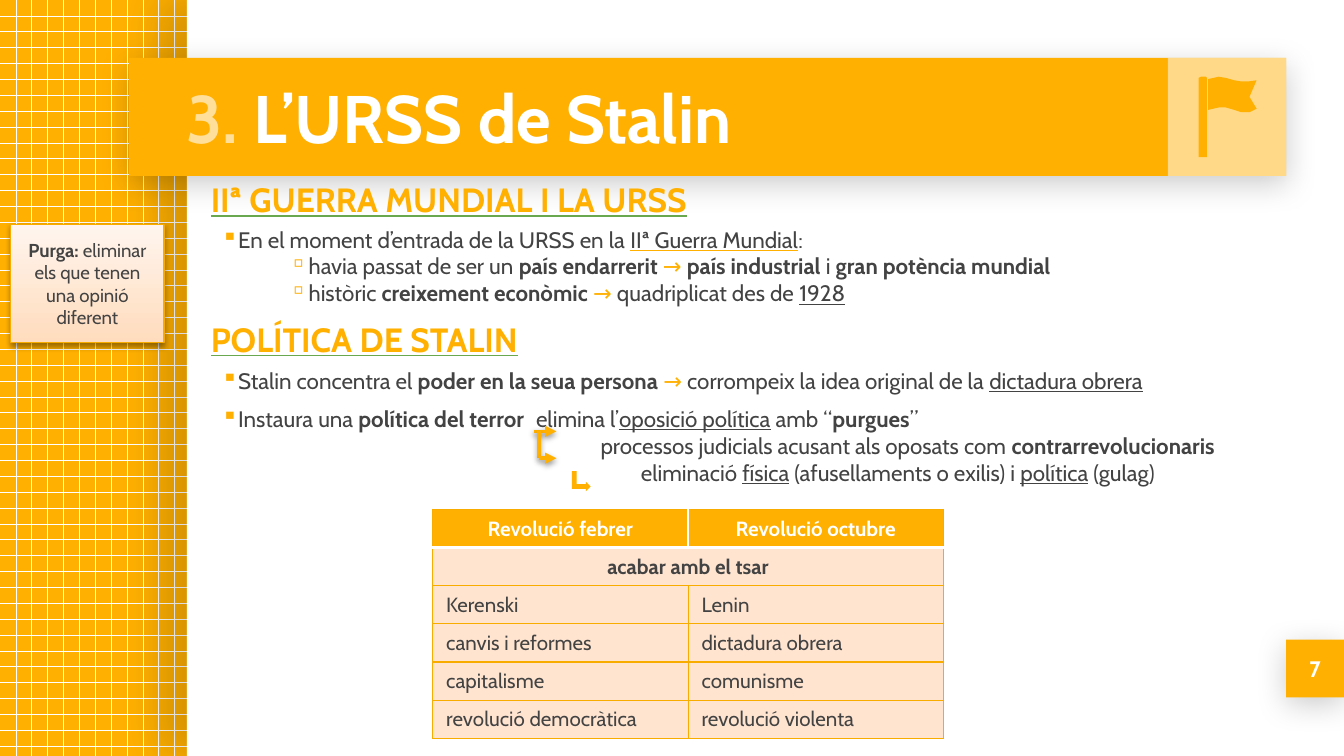
from lxml import etree
from pptx import Presentation, util as u
from pptx.dml.color import RGBColor
from pptx.enum import dml, shapes, text
from pptx.oxml import ns

ORANGE = RGBColor(0xFF, 0xB0, 0x00)
AMBER = RGBColor(0xF9, 0xAC, 0x00)
PALE_ORANGE = RGBColor(0xFF, 0xDF, 0x99)
PEACH = RGBColor(0xFF, 0xE4, 0xD0)
PEACH_DARK = RGBColor(0xFF, 0xDC, 0xBD)
PEACH_LIGHT = RGBColor(0xFF, 0xF5, 0xEE)
GREEN = RGBColor(0x6A, 0xA8, 0x4F)
GREY = RGBColor(0x43, 0x43, 0x43)
WHITE = RGBColor(0xFF, 0xFF, 0xFF)
BLACK = RGBColor(0x00, 0x00, 0x00)

FONT = "Cabin"
COLUMNS, ROWS = 100, 56.25
UNIT = u.Inches(10) / COLUMNS
PANEL_SHADOW = (20, 16.9, 3.8, 90)
NOTE_SHADOW = (38, 3.1, 1.6, 90)
CENTER, LEFT = text.PP_ALIGN.CENTER, text.PP_ALIGN.LEFT
MIDDLE, TOP = text.MSO_ANCHOR.MIDDLE, text.MSO_ANCHOR.TOP


def grid(*lengths):
    return [u.Emu(round(length * UNIT)) for length in lengths]


def child(parent, tag, **attributes):
    element = etree.SubElement(parent, ns.qn(tag))
    for key, value in attributes.items():
        element.set(key, str(value))
    return element


def add_effects(shape, shadow=None):
    effects = child(shape._element.spPr, "a:effectLst")
    if shadow:
        alpha, blur, distance, angle = shadow
        outer = child(effects, "a:outerShdw", blurRad=u.Pt(blur), dist=u.Pt(distance),
                      dir=angle * 60000, algn="bl", rotWithShape=0)
        color = child(outer, "a:srgbClr", val=BLACK)
        child(color, "a:alpha", val=alpha * 1000)


def add_panel(slide, box, color, shadow=None, kind=shapes.MSO_SHAPE.RECTANGLE):
    shape = slide.shapes.add_shape(kind, *grid(*box))
    shape.fill.solid()
    shape.fill.fore_color.rgb = color
    shape.line.fill.background()
    add_effects(shape, shadow)
    return shape


def set_font(paragraph, size, color, bold=None):
    font = paragraph.font
    font.name, font.size, font.bold = FONT, u.Pt(size), bold
    font.color.rgb = color


def add_runs(paragraph, runs):
    for content, bold, underline, color in runs:
        run = paragraph.add_run()
        run.text = content
        run.font.bold = bold
        run.font.underline = underline is not None
        run.font.color.rgb = color
        if underline is not None:
            fill = child(child(run.font._element, "a:uFill"), "a:solidFill")
            child(fill, "a:srgbClr", val=underline)


def plain(content, color=GREY):
    return content, False, None, color


def bold(content, color=GREY):
    return content, True, None, color


def underlined(content, line=GREY):
    return content, False, line, GREY


def add_text_box(slide, box, anchor=TOP):
    frame = slide.shapes.add_textbox(*grid(*box)).text_frame
    frame.word_wrap = True
    frame.vertical_anchor = anchor
    frame.margin_left = frame.margin_right = frame.margin_top = frame.margin_bottom = u.Inches(0.1)
    return frame


def add_heading(slide, box, content):
    paragraph = add_text_box(slide, box).paragraphs[0]
    set_font(paragraph, 18, ORANGE, True)
    add_runs(paragraph, [(content, True, GREEN, ORANGE)])


def add_body(slide, box, lines):
    frame = add_text_box(slide, box)
    for index, (bullet, indent, space, tab, runs) in enumerate(lines):
        paragraph = frame.add_paragraph() if index else frame.paragraphs[0]
        properties = paragraph._p.get_or_add_pPr()
        properties.set("marL", str(grid(indent)[0]))
        properties.set("indent", str(grid(-1 if bullet else 0)[0]))
        paragraph.space_before = u.Pt(space)
        if bullet:
            child(child(properties, "a:buClr"), "a:srgbClr", val=ORANGE)
            child(properties, "a:buChar", char=bullet)
        else:
            child(properties, "a:buNone")
        if tab:
            child(child(properties, "a:tabLst"), "a:tab", pos=grid(tab)[0], algn="l")
        set_font(paragraph, 12, GREY)
        add_runs(paragraph, runs)


def add_flag(slide, box):
    left, top, width, height = box
    pole = [(0.26, 0.17), (0.28, 0.16), (0.32, 0.16), (0.33, 0.17), (0.33, 0.84), (0.26, 0.84)]
    cloth = [(0.34, 0.18), (0.43, 0.16), (0.49, 0.17), (0.56, 0.19), (0.62, 0.2), (0.68, 0.2),
             (0.75, 0.19), (0.69, 0.33), (0.75, 0.43), (0.69, 0.46), (0.62, 0.46), (0.56, 0.44),
             (0.49, 0.42), (0.43, 0.42), (0.34, 0.44)]
    for outline in (pole, cloth):
        points = [grid(left + x * width, top + y * height) for x, y in outline]
        builder = slide.shapes.build_freeform(*points[0])
        builder.add_line_segments(points[1:], close=True)
        shape = builder.convert_to_shape()
        shape.fill.solid()
        shape.fill.fore_color.rgb = ORANGE
        shape.line.fill.background()
        add_effects(shape)


def add_title_bar(slide, box):
    left, top, width, height = box
    add_panel(slide, box, ORANGE, PANEL_SHADOW)
    badge = (left + width - height, top, height, height)
    shape = add_panel(slide, badge, WHITE)
    color = shape._element.spPr.find(".//" + ns.qn("a:srgbClr"))
    child(color, "a:alpha", val=53000)
    frame = add_text_box(slide, (left + 3.3, top, width - height - 3.6, height), MIDDLE)
    set_font(frame.paragraphs[0], 36, WHITE, True)
    add_runs(frame.paragraphs[0], [bold("3. ", PALE_ORANGE), bold("L’URSS de Stalin", WHITE)])
    add_flag(slide, badge)


def add_page_number(slide, box):
    frame = add_panel(slide, box, ORANGE, PANEL_SHADOW).text_frame
    frame.vertical_anchor = MIDDLE
    paragraph = frame.paragraphs[0]
    paragraph.alignment = CENTER
    set_font(paragraph, 12, WHITE, True)
    add_runs(paragraph, [bold("7", WHITE)])


def add_note(slide, box):
    shape = add_panel(slide, box, PEACH, NOTE_SHADOW)
    shape.fill.gradient()
    shape.fill.gradient_angle = 90
    for stop, color in zip(shape.fill.gradient_stops, (PEACH_DARK, PEACH_LIGHT)):
        stop.color.rgb = color
    shape.line.color.rgb = AMBER
    shape.line.width = u.Pt(0.75)
    frame = shape.text_frame
    frame.word_wrap = True
    frame.vertical_anchor = MIDDLE
    paragraph = frame.paragraphs[0]
    paragraph.alignment = CENTER
    set_font(paragraph, 10, GREY)
    add_runs(paragraph, [bold("Purga:"), plain(" eliminar els que tenen una opinió diferent")])


def add_branch_arrows(slide, box):
    left, top, width, height = box
    stem, right, bottom = left + 0.4, left + width, top + height
    for start, end, pointed in [((left, top), (right, top), True),
                                ((stem, bottom), (stem, top), False),
                                ((stem, bottom), (right, bottom), True)]:
        line = slide.shapes.add_connector(shapes.MSO_CONNECTOR.STRAIGHT, *grid(*start, *end))
        line.line.color.rgb = ORANGE
        line.line.width = u.Pt(2)
        if pointed:
            child(line.line._get_or_add_ln(), "a:tailEnd", type="triangle")
        add_effects(line, NOTE_SHADOW)
    bent = add_panel(slide, (left + 2.8, top + 3, 1.5, 1.4), ORANGE,
                     kind=shapes.MSO_SHAPE.BENT_UP_ARROW)
    bent.rotation = 90


def set_borders(cell, **sides):
    properties = cell._tc.get_or_add_tcPr()
    for side in "LRTB":
        color, width = sides.get(side, (AMBER, 0.75))
        line = child(properties, "a:ln" + side, w=u.Pt(width))
        child(child(line, "a:solidFill"), "a:srgbClr", val=color)


def add_comparison(slide, box):
    rows = [("Revolució febrer", "Revolució octubre"), ("acabar amb el tsar", ""),
            ("Kerenski", "Lenin"), ("canvis i reformes", "dictadura obrera"),
            ("capitalisme", "comunisme"), ("revolució democràtica", "revolució violenta")]
    table = slide.shapes.add_table(len(rows), 2, *grid(*box)).table
    table.cell(1, 0).merge(table.cell(1, 1))
    for r, row in enumerate(rows):
        for c, content in enumerate(row):
            cell = table.cell(r, c)
            borders = {"RL"[c]: (WHITE, 1), "B": (WHITE, 2)} if r == 0 else {}
            if r == 1:
                borders = {"T": (WHITE, 2)}
            set_borders(cell, **borders)
            cell.fill.solid()
            cell.fill.fore_color.rgb = PEACH if r else ORANGE
            if content:
                paragraph = cell.text_frame.paragraphs[0]
                paragraph.alignment = CENTER if r < 2 else LEFT
                color = GREY if r else WHITE
                set_font(paragraph, 11, color, r < 2)
                add_runs(paragraph, [(content, r < 2, None, color)])


def main():
    presentation = Presentation()
    presentation.slide_width, presentation.slide_height = grid(COLUMNS, ROWS)
    slide = presentation.slides.add_slide(presentation.slide_layouts[6])
    background = slide.background.fill
    background.patterned()
    background.pattern = dml.MSO_PATTERN.HORIZONTAL_BRICK
    background.fore_color.rgb, background.back_color.rgb = WHITE, ORANGE

    add_panel(slide, (13.9, 0, 86.1, ROWS), WHITE, (15, 22.5, 15, 180))
    add_title_bar(slide, (9.6, 4.3, 86.1, 8.8))
    add_page_number(slide, (95.7, 47.6, 4.3, 4.3))

    arrow = plain("→", ORANGE)
    add_heading(slide, (14.7, 12.3, 79.4, 4.7), "IIª GUERRA MUNDIAL I LA URSS")
    add_body(slide, (15.5, 15.8, 84.5, 9.3), [
        ("▪", 1, 0, None, [plain("En el moment d’entrada de la URSS en la "),
                           underlined("IIª Guerra Mundial", ORANGE), plain(":")]),
        ("▫", 6, 0, None, [plain("havia passat de ser un "), bold("país endarrerit "), arrow,
                           bold(" país industrial"), plain(" i "), bold("gran potència mundial")]),
        ("▫", 6, 0, None, [plain("històric "), bold("creixement econòmic "), arrow,
                           plain(" quadriplicat des de "), underlined("1928")])])
    add_heading(slide, (14.7, 22.7, 79.4, 4.7), "POLÍTICA DE STALIN")
    add_body(slide, (15.5, 26.3, 84.5, 11.6), [
        ("▪", 1, 0, None, [plain("Stalin concentra el "), bold("poder en la seua persona "), arrow,
                           plain(" corrompeix la idea original de la "),
                           underlined("dictadura obrera")]),
        ("▪", 1, 6, 23.4, [plain("Instaura una "), bold("política del terror"),
                           plain("\telimina l’"), underlined("oposició política"),
                           plain(" amb “"), bold("purgues"), plain("”")]),
        (None, 28.2, 0, None, [plain("processos judicials acusant als oposats com "),
                               bold("contrarrevolucionaris")]),
        (None, 31.2, 0, None, [plain("eliminació "), underlined("física"),
                               plain(" (afusellaments o exilis) i "), underlined("política"),
                               plain(" (gulag)")])])
    add_note(slide, (0.8, 16.7, 11.4, 8.8))
    add_branch_arrows(slide, (39.7, 32.1, 1.7, 2))
    add_comparison(slide, (32.2, 37.9, 38, 17))
    presentation.save("out.pptx")


if __name__ == "__main__":
    main()
